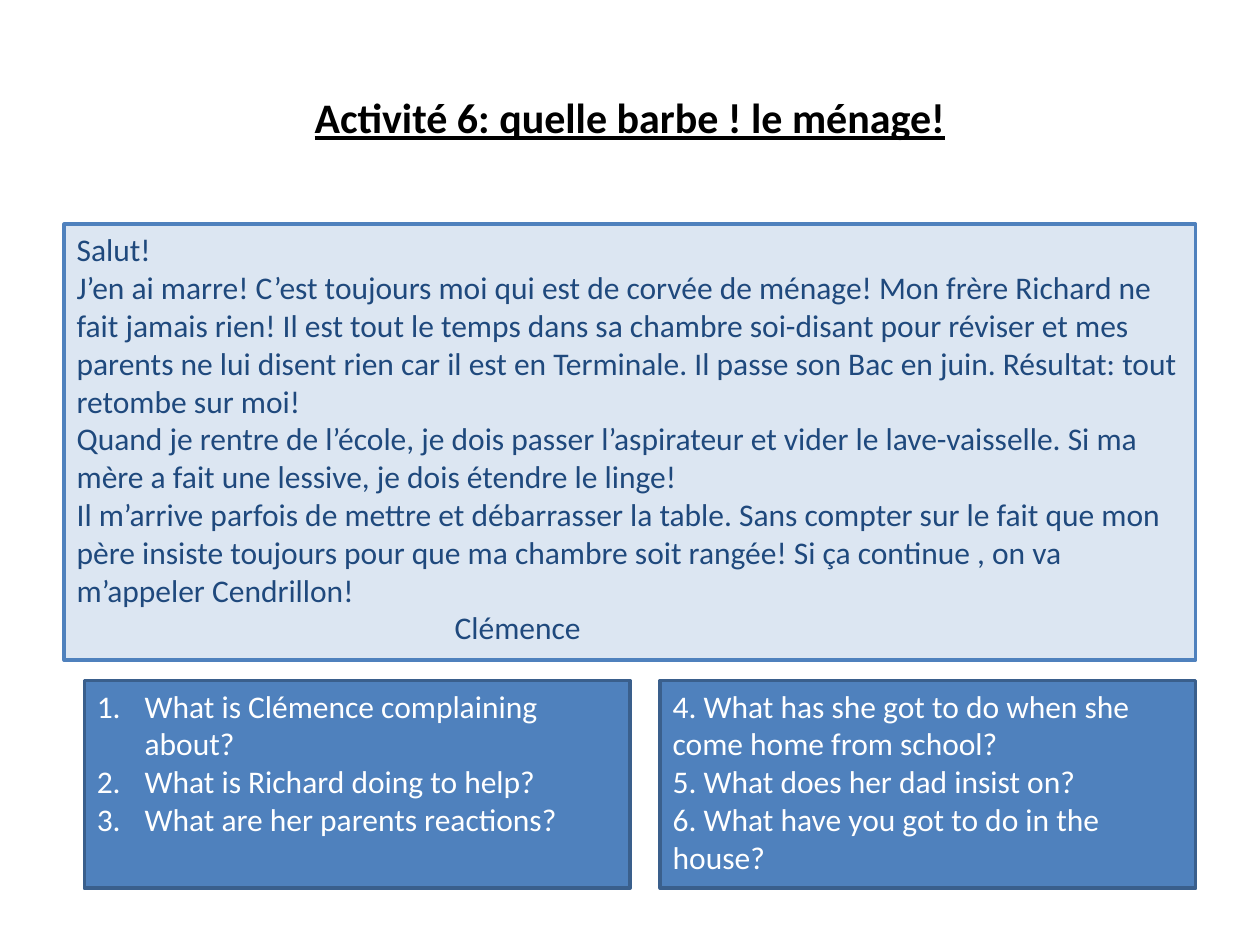
from dataclasses import dataclass
from typing import Any

from lxml import etree
from pptx import Presentation
from pptx import util as u
from pptx.dml.color import RGBColor
from pptx.enum import shapes, text
from pptx.oxml.ns import qn

LETTER = (
    "Salut!",
    "J’en ai marre! C’est toujours moi qui est de corvée de ménage! Mon frère Richard ne fait "
    "jamais rien! Il est tout le temps dans sa chambre soi-disant pour réviser et mes parents ne "
    "lui disent rien car il est en Terminale. Il passe son Bac en juin. Résultat: tout retombe "
    "sur moi!",
    "Quand je rentre de l’école, je dois passer l’aspirateur et vider le lave-vaisselle. Si ma "
    "mère a fait une lessive, je dois étendre le linge!",
    "Il m’arrive parfois de mettre et débarrasser la table. Sans compter sur le fait que mon "
    "père insiste toujours pour que ma chambre soit rangée! Si ça continue , on va m’appeler "
    "Cendrillon!",
)
FIRST_QUESTIONS = (
    "What is Clémence complaining about?",
    "What is Richard doing to help?",
    "What are her parents reactions?",
)
LAST_QUESTIONS = (
    "4. What has she got to do when she come home from school?",
    "5. What does her dad insist on?",
    "6. What have you got to do in the house?",
)


def color(value):
    """Turn a hex string into a colour."""
    return RGBColor.from_string(value)


def write(para, words, *, ink, face="Calibri", size=18, bold=False, underline=False,
          align=text.PP_ALIGN.LEFT, margin=0, numbered=False):
    """Put formatted words in a paragraph."""
    para.alignment = align
    props = para._p.get_or_add_pPr()
    if margin:
        props.set("marL", str(u.Inches(margin)))
    if numbered:
        props.set("indent", str(-u.Inches(margin)))
        etree.SubElement(props, qn("a:buFont"), typeface="+mj-lt")
        etree.SubElement(props, qn("a:buAutoNum"), type="arabicPeriod")
    span = para.add_run()
    span.text = words
    span.font.name = face
    span.font.size = u.Pt(size)
    span.font.bold = bold
    span.font.underline = underline
    span.font.color.rgb = color(ink)


@dataclass
class Worksheet:
    """Style and current page, on a grid of 100 columns by 75 rows."""

    deck: Any
    page: Any
    columns: int = 100
    rows: int = 75
    letter_fill: str = "DCE6F2"
    letter_ink: str = "1F497D"
    accent: str = "4F81BD"
    accent_edge: str = "3A5F8C"

    def area(self, left, top, width, height):
        """Convert grid cells to slide lengths."""
        column = self.deck.slide_width / self.columns
        row = self.deck.slide_height / self.rows
        return [round(n) for n in (left * column, top * row, width * column, height * row)]

    def title(self, words, *cells):
        """Add the centred heading."""
        box = self.page.shapes.add_textbox(*self.area(*cells))
        box.text_frame.word_wrap = True
        box.text_frame.vertical_anchor = text.MSO_ANCHOR.MIDDLE
        write(box.text_frame.paragraphs[0], words, ink="000000", size=24, bold=True,
              underline=True, align=text.PP_ALIGN.CENTER)

    def panel(self, lines, *cells, fill, edge, ink, **style):
        """Add a bordered rectangle with text and return its frame."""
        box = self.page.shapes.add_shape(shapes.MSO_SHAPE.RECTANGLE, *self.area(*cells))
        box.shadow.inherit = False
        box.fill.solid()
        box.fill.fore_color.rgb = color(fill)
        box.line.color.rgb = color(edge)
        box.line.width = u.Pt(2)
        frame = box.text_frame
        frame.word_wrap = True
        frame.vertical_anchor = text.MSO_ANCHOR.TOP
        for index, words in enumerate(lines):
            para = frame.add_paragraph() if index else frame.paragraphs[0]
            write(para, words, ink=ink, **style)
        return frame

    def letter(self, lines, signature, *cells):
        """Add the letter with its indented signature."""
        frame = self.panel(lines, *cells, fill=self.letter_fill, edge=self.accent,
                           ink=self.letter_ink)
        write(frame.add_paragraph(), signature, ink=self.letter_ink, margin=3)

    def questions(self, lines, *cells, **style):
        """Add a panel of questions."""
        self.panel(lines, *cells, fill=self.accent, edge=self.accent_edge, ink="FFFFFF", **style)


def main():
    """Build the worksheet."""
    deck = Presentation()
    deck.slide_width, deck.slide_height = u.Inches(10), u.Inches(7.5)
    sheet = Worksheet(deck, deck.slides.add_slide(deck.slide_layouts[6]))
    sheet.title("Activité 6: quelle barbe ! le ménage!", 5, 3, 90, 12.5)
    sheet.letter(LETTER, "Clémence", 5.1, 17.8, 89.8, 34.6)
    sheet.questions(FIRST_QUESTIONS, 6.7, 54, 43.3, 16.5, margin=0.38, numbered=True)
    sheet.questions(LAST_QUESTIONS, 52.4, 54, 42.5, 16.5)
    deck.save("out.pptx")


if __name__ == "__main__":
    main()
